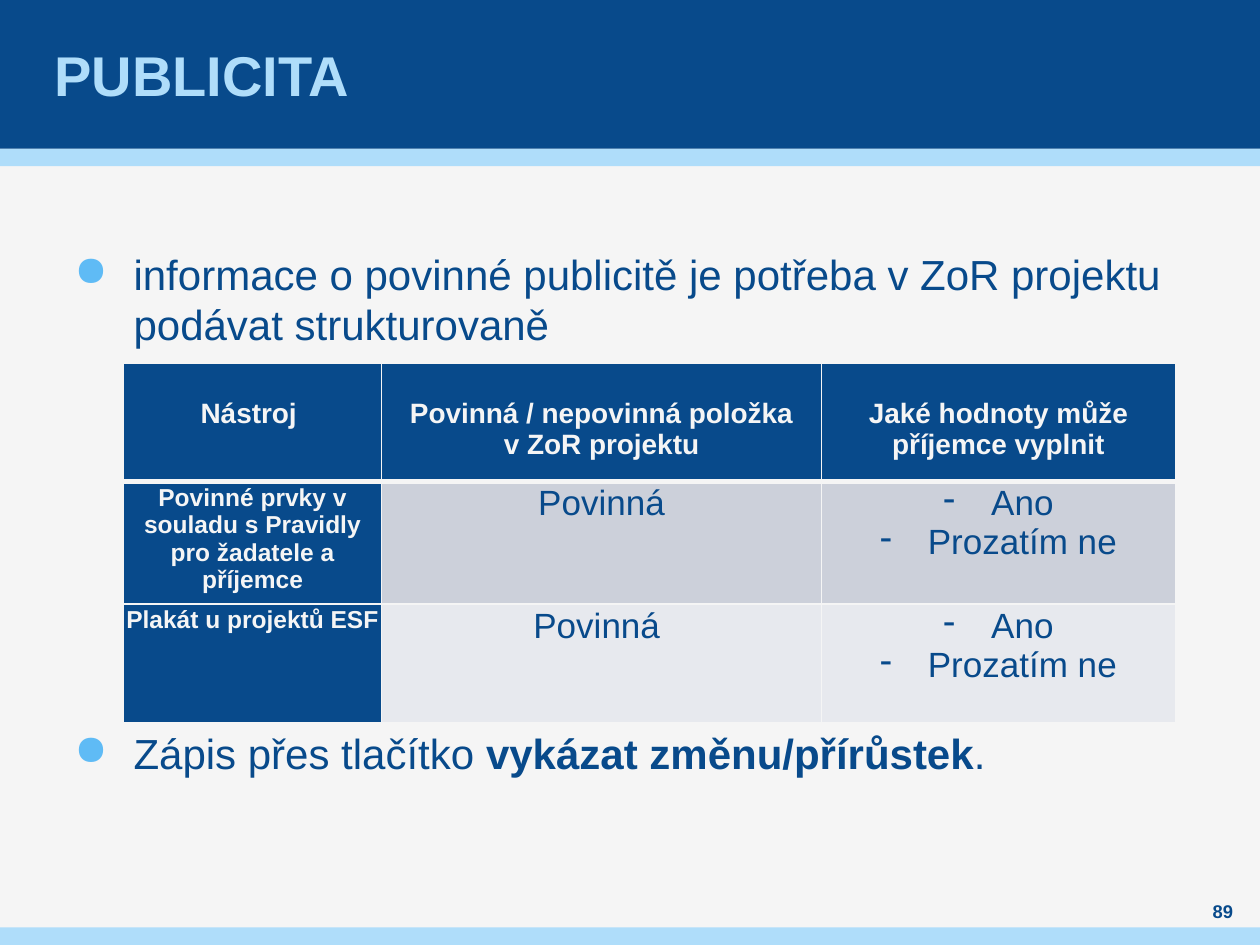
from lxml.etree import SubElement
from pptx import Presentation
from pptx.dml.color import RGBColor
from pptx.enum.shapes import MSO_SHAPE as Preset
from pptx.enum.text import MSO_ANCHOR as Anchor, PP_ALIGN as Align
from pptx.oxml.ns import qn
from pptx.util import Inches, Pt

COLORS = {"navy": "084A8B", "sky": "AFDDFA", "bullet": "5FBBF5", "paper": "F5F5F5",
          "row_dark": "CCD0DA", "row_light": "E7E9EE"}

# Content
TITLE = "PUBLICITA"
PAGE_NUMBER = "89"
# Each bullet: space before in points, then (text, bold) runs
BULLETS = [
    (6, [("informace o povinné publicitě je potřeba v\u00a0ZoR projektu podávat strukturovaně", False)]),
    (210, [("Zápis přes tlačítko ", False), ("vykázat změnu/přírůstek", True), (".", False)]),
]
HEADER = ["Nástroj ", "Povinná / nepovinná položka v\u00a0ZoR projektu",
          "Jaké hodnoty může příjemce vyplnit"]
VALUES = ["Ano", "Prozatím ne"]
ROWS = [
    ("Povinné prvky v souladu s Pravidly pro žadatele a příjemce", "Povinná", VALUES),
    ("Plakát u projektů ESF", "Povinná ", VALUES),
]
COLUMN_WIDTHS = [2.05, 3.49, 2.81]
ROW_HEIGHT = 0.94
BANDS = [(1.18, 0.14, "sky"), (0, 1.18, "navy"), (7.36, 0.14, "sky")]  # top, height, colour


def rgb(name):
    return RGBColor.from_string(COLORS[name])


def place(shape, left, top, width, height):
    shape.left, shape.top = Inches(left), Inches(top)
    shape.width, shape.height = Inches(width), Inches(height)


def style(run, size, color, bold=False):
    run.font.name, run.font.size, run.font.bold = "Arial", Pt(size), bold
    run.font.color.rgb = rgb(color)


def set_insets(frame, side=0):
    frame.margin_left = frame.margin_right = Inches(side)
    frame.margin_top = frame.margin_bottom = 0
    frame.word_wrap = True


def add_bullet(paragraph, character, indent, color=None):
    properties = paragraph._p.get_or_add_pPr()
    properties.set("marL", str(Inches(indent)))
    properties.set("indent", str(-Inches(indent)))
    if color:
        bullet_color = SubElement(properties, qn("a:buClr"))
        SubElement(bullet_color, qn("a:srgbClr")).set("val", COLORS[color])
    SubElement(properties, qn("a:buChar")).set("char", character)


def set_borders(cell, bottom_width):
    properties = cell._tc.get_or_add_tcPr()
    for side, width in (("L", 1), ("R", 1), ("T", 1), ("B", bottom_width)):
        line = SubElement(properties, qn(f"a:ln{side}"))
        line.set("w", str(Pt(width)))
        fill = SubElement(line, qn("a:solidFill"))
        SubElement(fill, qn("a:srgbClr")).set("val", COLORS["paper"])


def fill_cell(cell, lines, size, color, bold, fill, top=0.02, bottom_border=1):
    cell.margin_left = cell.margin_right = cell.margin_bottom = Inches(0.02)
    cell.margin_top = Inches(top)
    set_borders(cell, bottom_border)
    cell.fill.solid()
    cell.fill.fore_color.rgb = rgb(fill)
    cell.text_frame.text = "\n".join(lines)
    for paragraph in cell.text_frame.paragraphs:
        paragraph.alignment = Align.CENTER
        style(paragraph.runs[0], size, color, bold)
        if len(lines) > 1:
            add_bullet(paragraph, "-", 0.38)


presentation = Presentation()
presentation.slide_width, presentation.slide_height = Inches(10), Inches(7.5)
slide = presentation.slides.add_slide(presentation.slide_layouts[5])
slide.background.fill.solid()
slide.background.fill.fore_color.rgb = rgb("paper")
shapes = slide.shapes
title = shapes.title

# Header and footer bands
for top, height, color in BANDS:
    band = shapes.add_shape(Preset.RECTANGLE, 0, Inches(top), Inches(10), Inches(height))
    band.shadow.inherit = False
    band.fill.solid()
    band.fill.fore_color.rgb = rgb(color)
    band.line.fill.background()

# Title, brought in front of the bands
shapes._spTree.append(title._element)
place(title, 0.39, 0, 9.21, 1.18)
title.text_frame.text = TITLE
set_insets(title.text_frame, 0.04)
title.text_frame.vertical_anchor = Anchor.MIDDLE
title.text_frame.paragraphs[0].alignment = Align.LEFT
style(title.text_frame.paragraphs[0].runs[0], 32, "sky", True)

# Bullets above and below the table
body = shapes.add_textbox(Inches(0.59), Inches(1.97), Inches(8.82), Inches(4.72)).text_frame
set_insets(body)
for index, (space_before, parts) in enumerate(BULLETS):
    paragraph = body.add_paragraph() if index else body.paragraphs[0]
    paragraph.line_spacing = Pt(28.8)
    paragraph.space_before, paragraph.space_after = Pt(space_before), Pt(6)
    add_bullet(paragraph, "●", 0.47, "bullet")
    for text, bold in parts:
        run = paragraph.add_run()
        run.text = text
        style(run, 24, "navy", bold)

# Page number
number = shapes.add_textbox(Inches(9.45), Inches(7.13), Inches(0.51), Inches(0.2)).text_frame
set_insets(number)
number.vertical_anchor = Anchor.MIDDLE
number.text = PAGE_NUMBER
number.paragraphs[0].alignment = Align.CENTER
style(number.paragraphs[0].runs[0], 10.5, "navy", True)

# Table
row_count = len(ROWS) + 1
table = shapes.add_table(row_count, len(HEADER), Inches(0.98), Inches(2.88),
                         Inches(sum(COLUMN_WIDTHS)), Inches(ROW_HEIGHT * row_count)).table
for column, width in zip(table.columns, COLUMN_WIDTHS):
    column.width = Inches(width)
for row in table.rows:
    row.height = Inches(ROW_HEIGHT)
for column, text in enumerate(HEADER):
    fill_cell(table.cell(0, column), [text], 16, "paper", True, "navy", top=0.28, bottom_border=3)
for row, (tool, duty, values) in enumerate(ROWS, start=1):
    shade = "row_dark" if row % 2 else "row_light"
    fill_cell(table.cell(row, 0), [tool], 14, "paper", True, "navy")
    fill_cell(table.cell(row, 1), [duty], 20, "navy", False, shade)
    fill_cell(table.cell(row, 2), values, 20, "navy", False, shade)

presentation.save("out.pptx")
